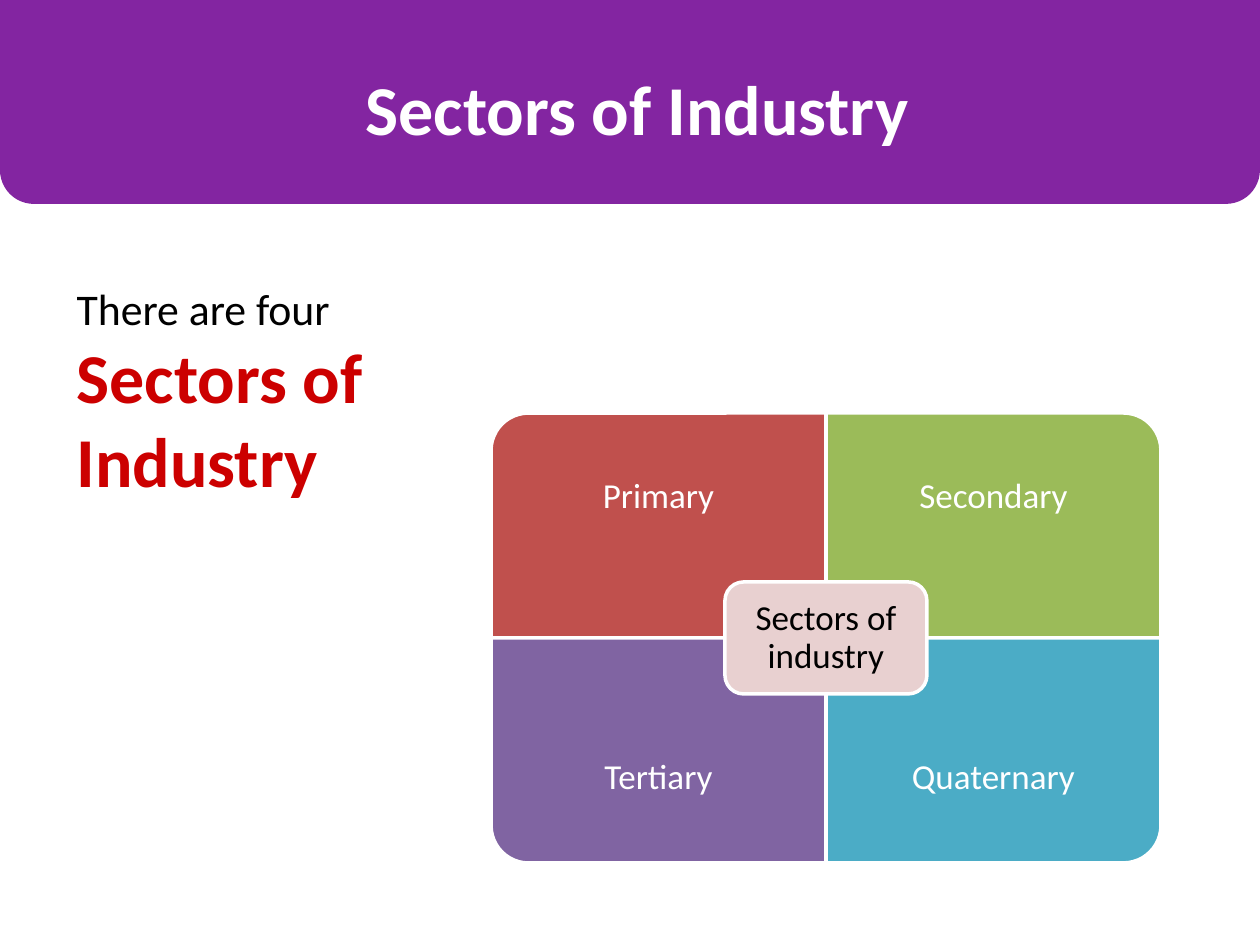
from dataclasses import dataclass

from lxml.etree import SubElement
from pptx import Presentation
from pptx.dml.color import RGBColor
from pptx.enum.shapes import MSO_SHAPE
from pptx.enum.text import MSO_ANCHOR, MSO_AUTO_SIZE, PP_ALIGN
from pptx.oxml.ns import qn
from pptx.slide import Slide
from pptx.util import Emu, Pt

COLOURS = {
    "banner": "8325A1",
    "white": "FFFFFF",
    "black": "000000",
    "emphasis": "CC0000",
    "primary": "C0504D",
    "secondary": "9BBB59",
    "tertiary": "8064A2",
    "quaternary": "4BACC6",
    "hub": "E8D0D0",
}


@dataclass
class SectorSlide:
    """Draws styled elements on one slide, measured in px."""

    slide: Slide
    font: str = "Calibri"
    emu_per_px: float = 914400 / 126

    def emu(self, px):
        return Emu(round(px * self.emu_per_px))

    def colour(self, name):
        return RGBColor.from_string(COLOURS[name])

    def add_words(self, paragraph, text, size, colour, bold=False):
        run = paragraph.add_run()
        run.text = text
        run.font.name = self.font
        run.font.size = Pt(size)
        run.font.bold = bold
        run.font.color.rgb = self.colour(colour)

    def placeholder(self, index, box, runs, align):
        holder = self.slide.placeholders[index]
        holder.left, holder.top, holder.width, holder.height = map(self.emu, box)
        self.slide.shapes._spTree.append(holder._element)
        frame = holder.text_frame
        frame.word_wrap = True
        frame.auto_size = MSO_AUTO_SIZE.NONE
        frame.vertical_anchor = MSO_ANCHOR.TOP
        paragraph = frame.paragraphs[0]
        properties = paragraph._p.get_or_add_pPr()
        properties.set("marL", "0")
        properties.set("indent", "0")
        SubElement(properties, qn("a:buNone"))
        paragraph.alignment = align
        paragraph.space_before = Pt(0)
        for run in runs:
            self.add_words(paragraph, *run)

    def panel(self, kind, box, fill, outlined=True, rotation=0):
        left, top, width, height = box
        if rotation % 180:
            left += (width - height) / 2
            top += (height - width) / 2
            width, height = height, width
        shape = self.slide.shapes.add_shape(
            kind, *map(self.emu, (left, top, width, height))
        )
        shape.rotation = rotation
        shape.shadow.inherit = False
        shape.fill.solid()
        shape.fill.fore_color.rgb = self.colour(fill)
        if outlined:
            shape.line.color.rgb = self.colour("white")
            shape.line.width = Pt(2)
        else:
            shape.line.fill.background()
        return shape

    def caption(self, frame, text, colour, inset):
        frame.word_wrap = True
        frame.vertical_anchor = MSO_ANCHOR.MIDDLE
        frame.margin_left = frame.margin_right = self.emu(inset)
        frame.margin_top = frame.margin_bottom = self.emu(inset)
        paragraph = frame.paragraphs[0]
        paragraph.alignment = PP_ALIGN.CENTER
        paragraph.line_spacing = 0.9
        self.add_words(paragraph, text, 20, colour)

    def label(self, box, text):
        label = self.slide.shapes.add_textbox(*map(self.emu, box))
        self.caption(label.text_frame, text, "white", 20)


def main():
    deck = Presentation()
    page = SectorSlide(deck.slides.add_slide(deck.slide_layouts[1]))
    deck.slide_width, deck.slide_height = page.emu(1260), page.emu(945)

    page.panel(MSO_SHAPE.RECTANGLE, (0, 0, 1260, 145), "banner", outlined=False)
    page.panel(MSO_SHAPE.ROUNDED_RECTANGLE, (0, 0, 1260, 204), "banner", outlined=False)
    page.placeholder(
        0, (14, 59, 1246, 97),
        [("Sectors of Industry", 40, "white", True)], PP_ALIGN.CENTER,
    )
    page.placeholder(
        1, (64, 275, 357, 277),
        [
            ("There are four ", 25, "black"),
            ("Sectors of Industry", 40, "emphasis", True),
        ],
        PP_ALIGN.LEFT,
    )

    left, top, width, height, label_height = 491, 413, 335, 225, 169
    sectors = [("Primary", 270), ("Secondary", 0), ("Tertiary", 180), ("Quaternary", 90)]
    for index, (sector, rotation) in enumerate(sectors):
        row, column = divmod(index, 2)
        x, y = left + column * width, top + row * height
        page.panel(
            MSO_SHAPE.ROUND_1_RECTANGLE, (x, y, width, height),
            sector.lower(), rotation=rotation,
        )
        label_top = y + row * (height - label_height)
        page.label((x, label_top, width, label_height), sector)

    hub_width, hub_height = 202, 112
    hub_box = (left + width - hub_width / 2, top + height - hub_height / 2,
               hub_width, hub_height)
    hub = page.panel(MSO_SHAPE.ROUNDED_RECTANGLE, hub_box, "hub")
    page.caption(hub.text_frame, "Sectors of industry", "black", 16)

    deck.save("out.pptx")


if __name__ == "__main__":
    main()
